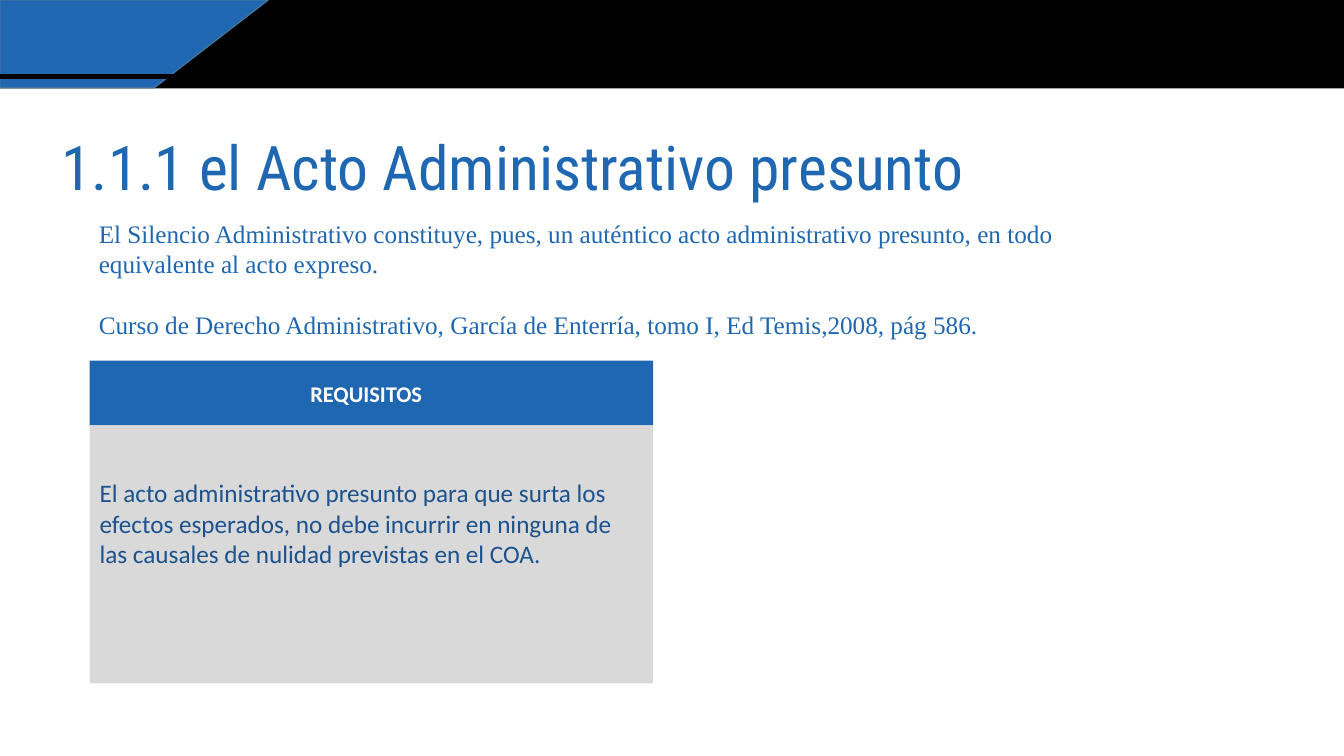
"""Builds the slide about the presumed administrative act."""
from lxml import etree
from pptx import Presentation
from pptx.dml.color import RGBColor
from pptx.enum.shapes import MSO_CONNECTOR, MSO_SHAPE
from pptx.enum.text import MSO_ANCHOR, PP_ALIGN
from pptx.oxml.ns import qn
from pptx.util import Cm, Pt

RECTANGLE = MSO_SHAPE.RECTANGLE
STRAIGHT = MSO_CONNECTOR.STRAIGHT
TOP, MIDDLE = MSO_ANCHOR.TOP, MSO_ANCHOR.MIDDLE
LEFT, CENTER = PP_ALIGN.LEFT, PP_ALIGN.CENTER

BLUE, DARK_BLUE, EDGE_BLUE = "1F67B0", "1C528D", "43739E"
BLACK, WHITE, GREY = "000000", "FFFFFF", "D9D9D9"

TITLE = "1.1.1 el Acto Administrativo presunto"
QUOTE = [
    "El Silencio Administrativo constituye, pues, un auténtico acto "
    "administrativo presunto, en todo equivalente al acto expreso.",
    "Curso de Derecho Administrativo, García de Enterría, tomo I, "
    "Ed Temis,2008, pág 586.",
]
CARD_HEAD = "REQUISITOS"
CARD_BODY = (
    "El acto administrativo presunto para que surta los efectos esperados, "
    "no debe incurrir en ninguna de las causales de nulidad previstas en el COA."
)

PAGE_WIDTH, PAGE_HEIGHT = 33.87, 19.05
BAND_HEIGHT = 2.23
TAB_OUTLINE = [(0, 0), (6.76, 0), (3.89, 2.21), (0, 2.21)]
STRIPE_Y, STRIPE_END = 1.93, 4.85
CARD_LEFT, CARD_TOP, CARD_WIDTH = 2.26, 9.09, 14.2
HEAD_HEIGHT, BODY_HEIGHT = 1.63, 6.5


def color(code):
    return RGBColor.from_string(code)


def add_block(page, left, top, width, height, fill):
    block = page.shapes.add_shape(RECTANGLE, Cm(left), Cm(top), Cm(width), Cm(height))
    block.shadow.inherit = False
    block.fill.solid()
    block.fill.fore_color.rgb = color(fill)
    block.line.fill.background()
    return block


def write(box, texts, font, size, ink, bold=False, align=LEFT, anchor=TOP, gap=0):
    frame = box.text_frame
    frame.word_wrap = True
    frame.vertical_anchor = anchor
    for index, text in enumerate(texts):
        para = frame.add_paragraph() if index else frame.paragraphs[0]
        para.alignment = align
        if index:
            para.space_before = Pt(gap)
        span = para.add_run()
        span.text = text
        span.font.name = font
        span.font.size = Pt(size)
        span.font.bold = bold
        span.font.color.rgb = color(ink)
    return frame


def add_header(page):
    add_block(page, 0, 0, PAGE_WIDTH, BAND_HEIGHT, BLACK)
    points = [(Cm(x), Cm(y)) for x, y in TAB_OUTLINE]
    builder = page.shapes.build_freeform(*points[0])
    builder.add_line_segments(points[1:], close=True)
    tab = builder.convert_to_shape()
    tab.shadow.inherit = False
    tab.fill.solid()
    tab.fill.fore_color.rgb = color(BLUE)
    tab.line.color.rgb = color(EDGE_BLUE)
    tab.line.width = Pt(1)
    stripe = page.shapes.add_connector(
        STRAIGHT, Cm(0), Cm(STRIPE_Y), Cm(STRIPE_END), Cm(STRIPE_Y))
    stripe.line.color.rgb = color(BLACK)
    stripe.line.width = Pt(3)
    etree.SubElement(stripe._element.spPr, qn("a:effectLst"))


def add_card(page):
    head = add_block(page, CARD_LEFT, CARD_TOP, CARD_WIDTH, HEAD_HEIGHT, BLUE)
    frame = write(head, [CARD_HEAD], "Calibri", 16, WHITE, True, CENTER, MIDDLE)
    frame.margin_right = Cm(0.51)
    frame.paragraphs[0].line_spacing = 1.07
    body = add_block(page, CARD_LEFT, CARD_TOP + HEAD_HEIGHT,
                     CARD_WIDTH, BODY_HEIGHT, GREY)
    frame = write(body, [CARD_BODY], "Calibri", 18, DARK_BLUE, anchor=MIDDLE)
    frame.margin_bottom = Cm(1.7)


def main():
    deck = Presentation()
    deck.slide_width, deck.slide_height = Cm(PAGE_WIDTH), Cm(PAGE_HEIGHT)
    page = deck.slides.add_slide(deck.slide_layouts[6])
    add_header(page)
    title = page.shapes.add_textbox(Cm(1.3), Cm(3.12), Cm(30.33), Cm(2.13))
    write(title, [TITLE], "Roboto Condensed", 44, BLUE)
    quote = page.shapes.add_textbox(Cm(2.24), Cm(5.38), Cm(26.52), Cm(4.11))
    write(quote, QUOTE, "Times New Roman", 18, BLUE, gap=22)
    add_card(page)
    deck.save("out.pptx")


if __name__ == "__main__":
    main()
